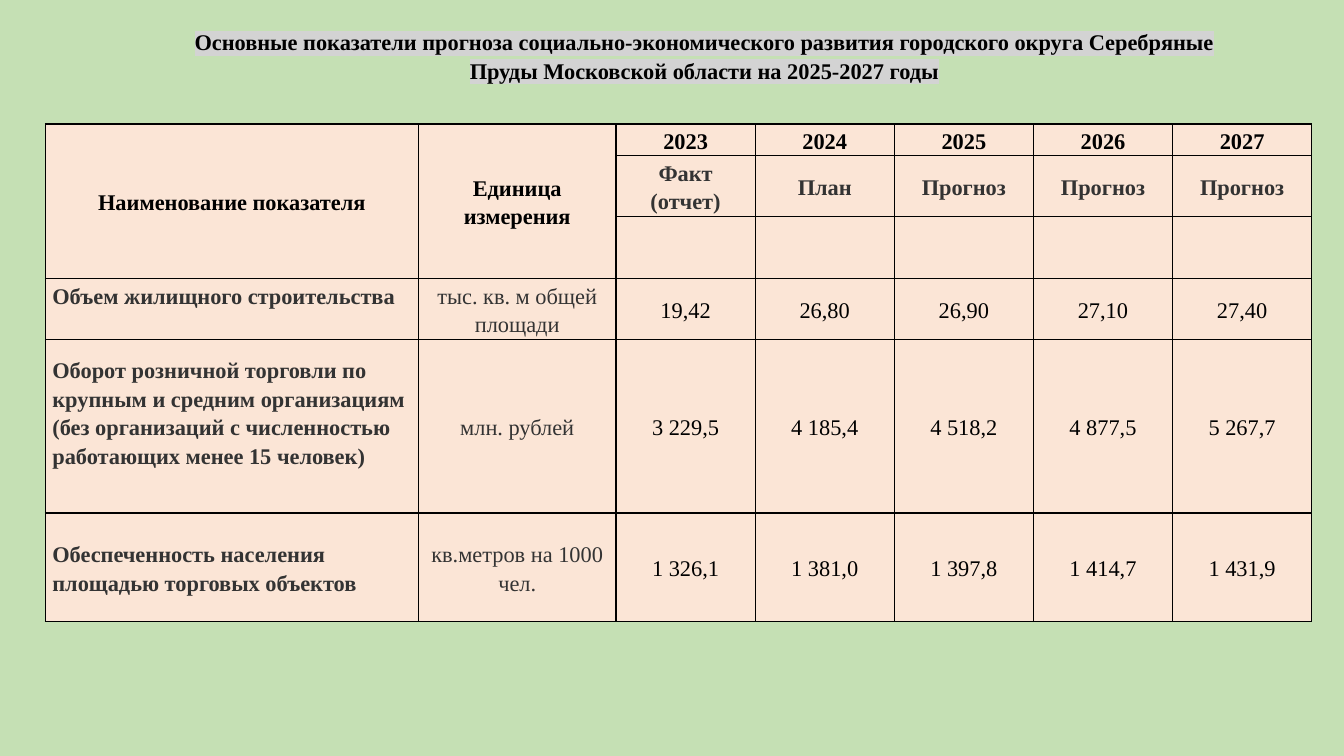
import pptx
import pptx.util
import pptx.dml.color
import pptx.enum.text
import pptx.oxml
import pptx.oxml.ns
from lxml import etree
from pptx.util import Inches

RGBColor = pptx.dml.color.RGBColor
ALIGN = pptx.enum.text.PP_ALIGN
ANCHOR = pptx.enum.text.MSO_ANCHOR
qn = pptx.oxml.ns.qn

GREEN = RGBColor(0xC5, 0xE0, 0xB4)
PEACH = RGBColor(0xFB, 0xE5, 0xD6)
BLACK = RGBColor(0, 0, 0)
DARK_GRAY = RGBColor(0x33, 0x33, 0x33)
LIGHT_GRAY = RGBColor(0xD3, 0xD3, 0xD3)

TITLE = ("Основные показатели прогноза социально-экономического развития "
         "городского округа Серебряные Пруды Московской области на 2025-2027 годы")
COLUMN_WIDTHS = [3.7, 1.96] + [1.38] * 5
ROW_HEIGHTS = [0.31, 0.61, 0.61, 0.61, 1.72, 1.08]
HEADER_ROWS = 3
ROWS = [
    ["Наименование показателя", "Единица измерения", "2023", "2024", "2025", "2026", "2027"],
    ["", "", "Факт\n(отчет)", "План", "Прогноз", "Прогноз", "Прогноз"],
    [""] * 7,
    ["Объем жилищного строительства", "тыс. кв. м общей площади",
     "19,42", "26,80", "26,90", "27,10", "27,40"],
    ["Оборот розничной торговли по крупным и средним организациям "
     "(без организаций с численностью работающих менее 15 человек)", "млн. рублей",
     "3 229,5", "4 185,4", "4 518,2", "4 877,5", "5 267,7"],
    ["Обеспеченность населения площадью торговых объектов", "кв.метров на 1000 чел.",
     "1 326,1", "1 381,0", "1 397,8", "1 414,7", "1 431,9"],
]
RAISED_ROWS = (3, 4)  # indicator names that sit above the middle of their row


class ForecastSlide:
    font_name = "Times New Roman"
    font_size = 16

    def __init__(self, presentation):
        self.slide = presentation.slides.add_slide(presentation.slide_layouts[5])
        background = self.slide.background.fill
        background.solid()
        background.fore_color.rgb = GREEN

    def format(self, paragraph, color, bold, align, spacing):
        paragraph.alignment = align
        paragraph.line_spacing = spacing
        font = paragraph.font
        font.name = self.font_name
        font.size = pptx.util.Pt(self.font_size)
        font.bold = bold
        font.color.rgb = color

    def title(self, text, left, top, width, height):
        shape = self.slide.shapes.title
        shape.left, shape.top = Inches(left), Inches(top)
        shape.width, shape.height = Inches(width), Inches(height)
        frame = shape.text_frame
        frame.text = text
        frame.word_wrap = True
        frame.auto_size = pptx.enum.text.MSO_AUTO_SIZE.NONE
        frame.vertical_anchor = ANCHOR.TOP
        paragraph = frame.paragraphs[0]
        self.format(paragraph, BLACK, True, ALIGN.CENTER, 1.05)
        # Text highlight
        properties = paragraph.runs[0].font._element if hasattr(
            paragraph.runs[0].font, "_element") else paragraph.runs[0]._r.get_or_add_rPr()
        highlight = etree.SubElement(properties, qn("a:highlight"))
        etree.SubElement(highlight, qn("a:srgbClr"), val=str(LIGHT_GRAY))

    def borders(self, cell):
        properties = cell._tc.get_or_add_tcPr()
        for index, side in enumerate(("a:lnL", "a:lnR", "a:lnT", "a:lnB")):
            line = etree.Element(qn(side), w=str(pptx.util.Pt(1)))
            fill = etree.SubElement(line, qn("a:solidFill"))
            etree.SubElement(fill, qn("a:srgbClr"), val=str(BLACK))
            properties.insert(index, line)

    def cell(self, cell, text, color, bold, align, margin, bottom):
        cell.text = text
        cell.vertical_anchor = ANCHOR.MIDDLE
        cell.margin_left = cell.margin_right = Inches(margin)
        cell.margin_top, cell.margin_bottom = 0, Inches(bottom)
        cell.fill.solid()
        cell.fill.fore_color.rgb = PEACH
        self.borders(cell)
        for paragraph in cell.text_frame.paragraphs:
            self.format(paragraph, color, bold, align, 1.15)

    def table(self, left, top):
        table = self.slide.shapes.add_table(
            len(ROWS), len(COLUMN_WIDTHS), Inches(left), Inches(top),
            Inches(sum(COLUMN_WIDTHS)), Inches(sum(ROW_HEIGHTS))).table
        table.first_row = table.horz_banding = False
        for column, width in zip(table.columns, COLUMN_WIDTHS):
            column.width = Inches(width)
        for row, height in zip(table.rows, ROW_HEIGHTS):
            row.height = Inches(height)
        for row, texts in enumerate(ROWS):
            header = row < HEADER_ROWS
            for column, text in enumerate(texts):
                name = column == 0 and not header
                gray = row == 1 or (not header and column < 2)
                self.cell(table.cell(row, column), text,
                          color=DARK_GRAY if gray else BLACK,
                          bold=header or name,
                          align=ALIGN.LEFT if name else ALIGN.CENTER,
                          margin=0.06 if row == 0 else 0.07,
                          bottom=0.28 if name and row in RAISED_ROWS else 0)
        for column in range(2):
            table.cell(0, column).merge(table.cell(HEADER_ROWS - 1, column))


def main():
    presentation = pptx.Presentation()
    presentation.slide_width = Inches(13.33)
    presentation.slide_height = Inches(7.5)
    forecast = ForecastSlide(presentation)
    # Heading
    forecast.title(TITLE, 1.74, 0.22, 10.49, 0.64)
    # Indicators by year
    forecast.table(0.45, 1.23)
    presentation.save("out.pptx")


if __name__ == "__main__":
    main()
